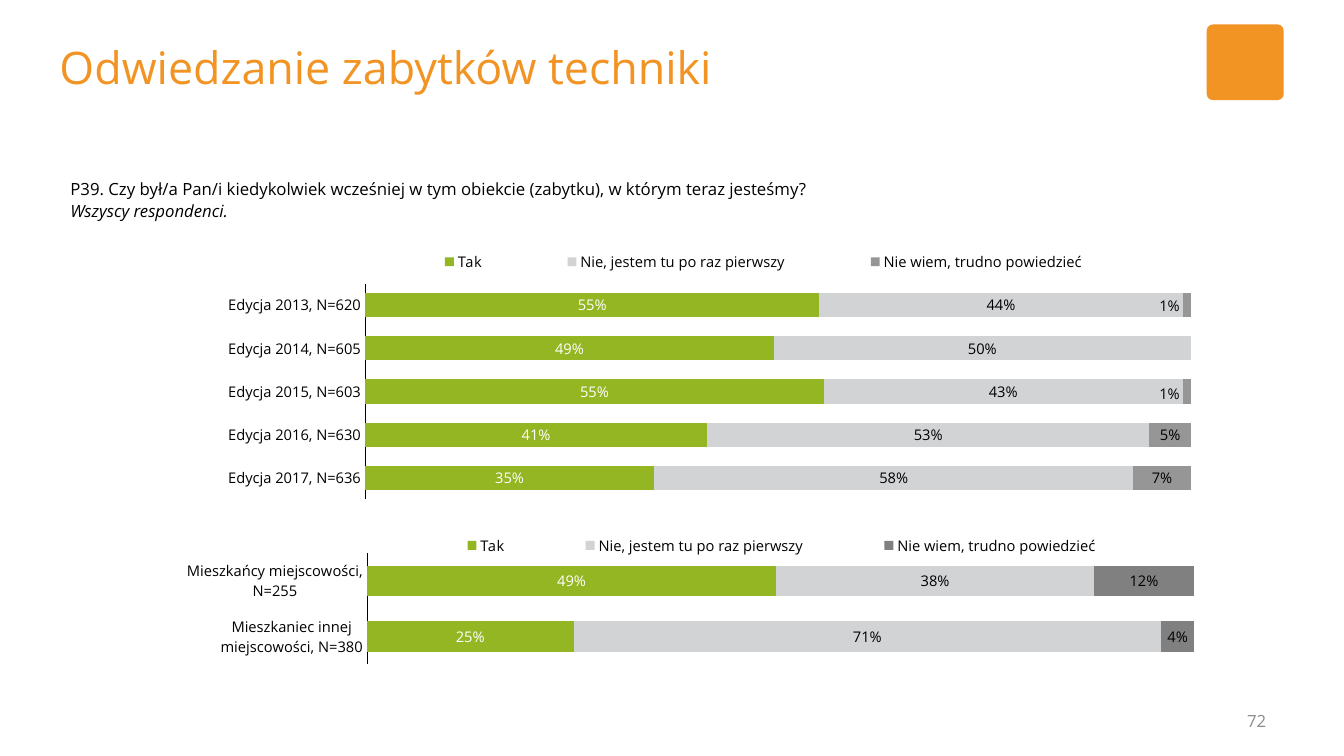
from pptx import Presentation
from pptx import util as u
from pptx.chart.data import CategoryChartData
from pptx.dml.color import RGBColor
from pptx.enum import chart as charts, shapes, text
from pptx.oxml import parse_xml
from pptx.oxml.ns import nsdecls, qn

COLORS = {"orange": "F29424", "green": "94B623", "light": "D1D3D4", "mid": "969696",
          "dark": "808080", "page": "8C8C8C", "black": "000000", "white": "FFFFFF"}
ANSWERS = ["Tak", "Nie, jestem tu po raz pierwszy", "Nie wiem, trudno powiedzieć"]


class SurveyPage:
    """Hold the survey style and the slide being built."""

    def __init__(self, deck, font="Open Sans"):
        self.font = font
        self.page = deck.slides.add_slide(deck.slide_layouts[5])

    def color(self, name):
        return RGBColor.from_string(COLORS[name])

    def style(self, font, size, color="black"):
        font.name, font.size = self.font, u.Pt(size)
        font.color.rgb = self.color(color)

    def place(self, box, left, top, width, height):
        box.left, box.top, box.width, box.height = map(u.Pt, (left, top, width, height))

    def title(self, words, area, size):
        box = self.page.shapes.title
        self.place(box, *area)
        frame = box.text_frame
        frame.text = words
        frame.auto_size = text.MSO_AUTO_SIZE.NONE
        frame.vertical_anchor = text.MSO_ANCHOR.BOTTOM
        frame.margin_left = frame.margin_right = frame.margin_top = frame.margin_bottom = 0
        para = frame.paragraphs[0]
        para.alignment = text.PP_ALIGN.LEFT
        self.style(para.font, size, "orange")

    def textbox(self, lines, area, align, color="black", spacing=None, middle=False):
        frame = self.page.shapes.add_textbox(*map(u.Pt, area)).text_frame
        frame.word_wrap = True
        frame.vertical_anchor = text.MSO_ANCHOR.MIDDLE if middle else text.MSO_ANCHOR.TOP
        frame.text = "\n".join(lines)
        for para in frame.paragraphs:
            para.alignment = align
            if spacing:
                para.line_spacing = u.Pt(spacing)
            self.style(para.font, 12, color)
        return frame

    def emblem(self, area):
        box = self.page.shapes.add_shape(shapes.MSO_SHAPE.ROUNDED_RECTANGLE, *map(u.Pt, area))
        box.adjustments[0] = 0.08
        box.shadow.inherit = False
        box.fill.solid()
        box.fill.fore_color.rgb = self.color("orange")
        box.line.fill.background()

    def layout(self, parent, index, inner=False, **values):
        for old in parent.findall(qn("c:layout")):
            parent.remove(old)
        parts = [("layoutTarget", "inner")] if inner else []
        if "w" in values:
            parts += [("xMode", "edge"), ("yMode", "edge")]
        parts += values.items()
        body = "".join(f'<c:{tag} val="{value}"/>' for tag, value in parts)
        parent.insert(index, parse_xml(
            f'<c:layout {nsdecls("c")}><c:manualLayout>{body}</c:manualLayout></c:layout>'))

    def bars(self, area, rows, fills, plot_area, legend_area):
        data = CategoryChartData(number_format="0%")
        data.categories = list(rows)
        for name, values in zip(ANSWERS, zip(*rows.values())):
            data.add_series(name, values)
        chart = self.page.shapes.add_chart(
            charts.XL_CHART_TYPE.BAR_STACKED_100, *map(u.Pt, area), data).chart
        self.style(chart.font, 10.5)
        chart.has_title = False
        plot = chart.plots[0]
        plot.gap_width, plot.overlap, plot.vary_by_categories = 79, 100, False
        for series, fill in zip(plot.series, fills):
            series.format.fill.solid()
            series.format.fill.fore_color.rgb = self.color(fill)
            labels = series.data_labels
            labels.show_value = True
            labels.number_format, labels.number_format_is_linked = "0%", False
            labels.position = charts.XL_LABEL_POSITION.CENTER
            self.style(labels.font, 10.5, "white" if fill == "green" else "black")
        rows_axis, share_axis = chart.category_axis, chart.value_axis
        rows_axis.reverse_order = True
        rows_axis.major_tick_mark = charts.XL_TICK_MARK.NONE
        rows_axis.format.line.width = u.Pt(0.25)
        rows_axis.format.line.color.rgb = self.color("black")
        share_axis.has_major_gridlines = False
        share_axis.minimum_scale = 0
        share_axis.visible = False
        chart.has_legend = True
        chart.legend.position = charts.XL_LEGEND_POSITION.TOP
        chart.legend.include_in_layout = False
        self.layout(chart.element.xpath(".//c:plotArea")[0], 0, True, **plot_area)
        self.layout(chart.element.xpath(".//c:legend")[0], 1, **legend_area)
        return chart

    def shift_labels(self, chart, offsets):
        """Move the last series' point labels, or delete those with no offset."""
        series = chart.plots[0].series[len(ANSWERS) - 1]
        for index, offset in offsets.items():
            series.points[index].data_label.position = charts.XL_LABEL_POSITION.CENTER
            label = chart.element.xpath(f'.//c:dLbl[c:idx/@val="{index}"]')[0]
            if offset:
                self.layout(label, 1, x=offset[0], y=offset[1])
            else:
                for child in list(label)[1:]:
                    label.remove(child)
                label.append(parse_xml(f'<c:delete {nsdecls("c")} val="1"/>'))


def main():
    deck = Presentation()
    deck.slide_width, deck.slide_height = u.Pt(960), u.Pt(540)
    survey = SurveyPage(deck)
    survey.title("Odwiedzanie zabytków techniki", (42.5, -0.7, 772, 67.7), 32)
    survey.emblem((862, 17.5, 55, 54))
    question = survey.textbox(
        ["P39. Czy był/a Pan/i kiedykolwiek wcześniej w tym obiekcie (zabytku), "
         "w którym teraz jesteśmy?", "Wszyscy respondenci."],
        (43.2, 122.4, 873.4, 39.6), text.PP_ALIGN.JUSTIFY, spacing=16)
    question.paragraphs[1].font.italic = True
    survey.textbox(["72"], (687.6, 500.4, 223.9, 28.8), text.PP_ALIGN.RIGHT, "page", middle=True)

    editions = {"Edycja 2013, N=620": (0.55, 0.44, 0.01),
                "Edycja 2014, N=605": (0.49, 0.50, 0),
                "Edycja 2015, N=603": (0.55, 0.43, 0.01),
                "Edycja 2016, N=630": (0.41, 0.53, 0.05),
                "Edycja 2017, N=636": (0.35, 0.58, 0.07)}
    chart = survey.bars((94.3, 162, 771.1, 226.8), editions, ("green", "light", "mid"),
                        dict(x=0.216, y=0.179, w=0.765, h=0.68),
                        dict(x=0.215, y=0.07, w=0.74, h=0.08))
    survey.shift_labels(chart, {0: (-0.016, 0.003), 1: None, 2: (-0.016, 0.008)})

    residents = {"Mieszkańcy miejscowości, N=255": (0.49, 0.38, 0.12),
                 "Mieszkaniec innej miejscowości, N=380": (0.25, 0.71, 0.04)}
    survey.bars((117.4, 378, 753.8, 96.5), residents, ("green", "light", "dark"),
                dict(x=0.192, y=0.179, w=0.784, h=0.821),
                dict(x=0.215, y=0.03, w=0.74, h=0.18))
    deck.save("out.pptx")


if __name__ == "__main__":
    main()
